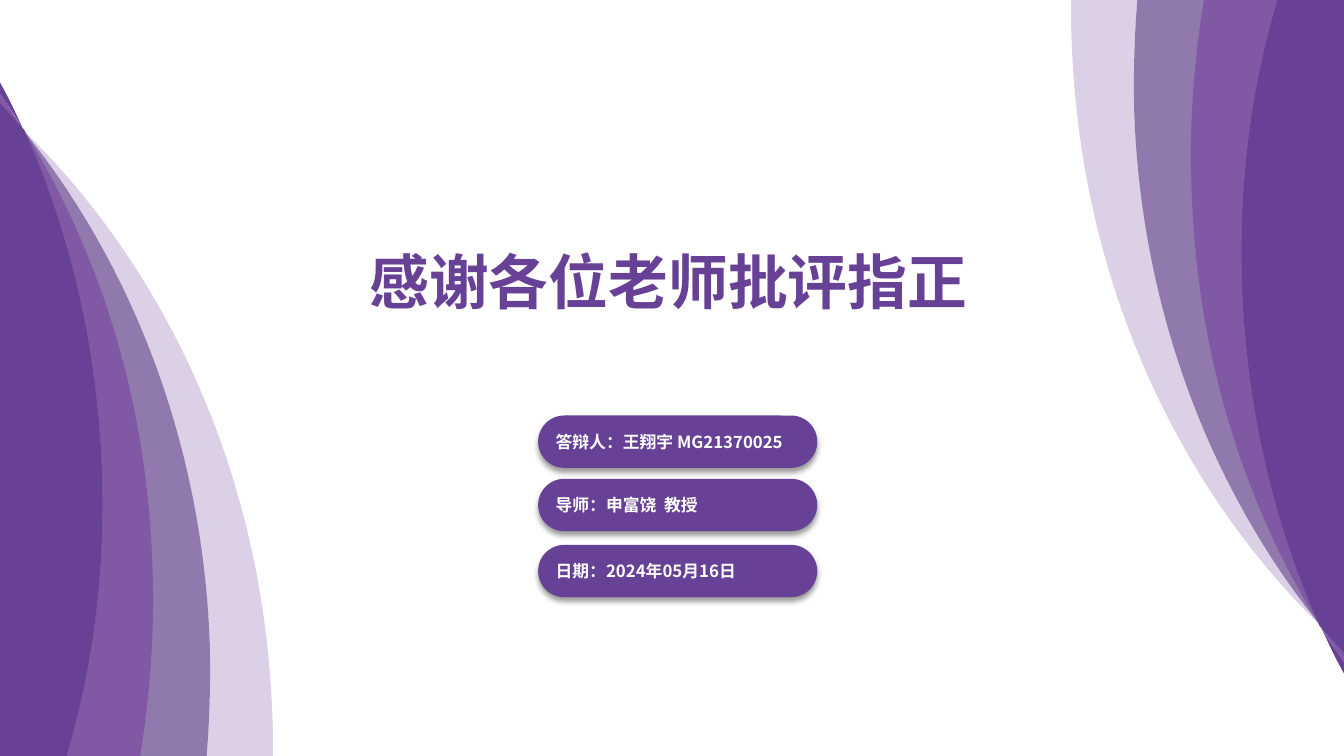
from lxml.etree import SubElement
from pptx import Presentation
from pptx.dml.color import RGBColor
from pptx.enum.shapes import MSO_SHAPE
from pptx.enum.text import MSO_ANCHOR, PP_ALIGN
from pptx.oxml.ns import qn
from pptx.util import Pt

WIDTH, HEIGHT = 960, 540
FONT = "Noto Sans CJK SC"
PURPLE, VIOLET, MAUVE, LILAC = "674196", "8058A3", "9079AD", "DBD0E6"

# Left bands, back to front: colour, then a start point followed by
# lines (x, y) and cubic curves (x1, y1, x2, y2, x, y), in points
BANDS = [
    (LILAC, [(0, 77.8), (0, 540), (195, 540),
             (195, 529.2, 195, 518.4, 194.4, 507.6),
             (187.9, 341.3, 120.2, 194.4, 18, 94.3), (18.7, 95.8),
             (95, 191.5, 144, 318.2, 149.8, 458.6),
             (150.5, 486, 149.8, 513.4, 147.6, 540), (0, 540)]),
    (MAUVE, [(147.6, 540), (149.8, 513.4, 150.5, 486, 149.8, 458.6),
             (144, 306.7, 87.1, 171.4, 0, 73.4), (0, 540)]),
    ("DDE3E5", [(15.8, 90.7), (16.6, 92.9), (17.3, 93.6), (18, 94.3)]),
    ("D0D6D8", [(17.3, 93.6), (18.7, 95.8), (18, 94.3)]),
    (VIOLET, [(0, 73.4), (0, 540), (100.1, 540),
              (107.3, 495.4, 110.9, 448.6, 108.7, 400.3),
              (104.4, 286.6, 72, 182.2, 18.7, 95.8),
              (17.3, 93.6), (17.3, 92.9),
              (49.7, 164.9, 69.1, 246.2, 72.7, 332.6),
              (75.6, 405.4, 67, 475.2, 47.5, 540), (0, 540)]),
    (PURPLE, [(0, 59), (0, 67), (5, 74.9, 10.8, 82.1, 15.8, 90.7),
              (10.8, 79.9, 5.8, 69.1, 0, 59)]),
    (VIOLET, [(0, 67), (0, 73.4), (5.8, 79.9, 11.5, 86.4, 17.3, 93.6),
              (15.8, 90.7), (10.8, 82.8, 5, 74.9, 0, 67)]),
    (PURPLE, [(0, 73.4), (0, 540), (47.5, 540),
              (67, 475.2, 75.6, 405.4, 72.7, 332.6),
              (69.1, 246.2, 49.7, 164.9, 17.3, 92.9),
              (11.5, 86.4, 5.8, 79.9, 0, 73.4)]),
]

# Top edge and wording of each capsule
CAPSULES = [
    (296.8, "答辩人：王翔宇 MG21370025"),
    (342, "导师：申富饶  教授"),
    (389.2, "日期：2024年05月16日"),
]


def colour(value):
    return RGBColor.from_string(value)


def paint(shape, fill):
    shape.shadow.inherit = False
    shape.fill.solid()
    shape.fill.fore_color.rgb = colour(fill)
    shape.line.fill.background()


def half_turn(segment):
    """Turn a segment by half a circle about the centre of the page."""
    return tuple((HEIGHT if i % 2 else WIDTH) - value
                 for i, value in enumerate(segment))


def add_band(page, fill, outline):
    segments = [[Pt(value) for value in segment] for segment in outline]
    builder = page.shapes.build_freeform(*segments[0], scale=1.0)
    builder.add_line_segments([segment[-2:] for segment in segments[1:]], close=True)
    band = builder.convert_to_shape()
    paint(band, fill)

    # Bend the lines that stand for curves
    lines = list(band._element.iter(qn("a:lnTo")))
    for line, segment in zip(lines, segments[1:]):
        if len(segment) == 6:
            line.tag = qn("a:cubicBezTo")
            line.clear()
            for x, y in zip(segment[::2], segment[1::2]):
                SubElement(line, qn("a:pt"), x=str(x - band.left), y=str(y - band.top))


def write(box, text, size, ink, align):
    frame = box.text_frame
    frame.vertical_anchor = MSO_ANCHOR.MIDDLE
    para = frame.paragraphs[0]
    para.text = text
    para.alignment = align
    para.font.size = Pt(size)
    para.font.bold = True
    para.font.color.rgb = colour(ink)
    para.font.name = FONT
    # Chinese characters take the East Asian typeface
    properties = para._p.get_or_add_pPr().find(qn("a:defRPr"))
    SubElement(properties, qn("a:ea"), typeface=FONT)


def add_title(page, text):
    title = page.shapes.title
    title.left, title.top, title.width, title.height = Pt(255), Pt(171), Pt(445), Pt(59)
    title.text_frame.word_wrap = False
    write(title, text, 42.7, PURPLE, PP_ALIGN.CENTER)


def add_capsule(page, top, text):
    capsule = page.shapes.add_shape(
        MSO_SHAPE.ROUNDED_RECTANGLE, Pt(384.4), Pt(top), Pt(199.4), Pt(37.4))
    capsule.adjustments[0] = 0.5
    paint(capsule, PURPLE)
    # Soft shadow straight below
    effects = capsule._element.spPr.find(qn("a:effectLst"))
    shadow = SubElement(effects, qn("a:outerShdw"), blurRad=str(Pt(4)),
                        dist=str(Pt(3)), dir="5400000", algn="t", rotWithShape="0")
    black = SubElement(shadow, qn("a:srgbClr"), val="000000")
    SubElement(black, qn("a:alpha"), val="40000")
    write(capsule, text, 12, "FFFFFF", PP_ALIGN.LEFT)


def main():
    deck = Presentation()
    deck.slide_width, deck.slide_height = Pt(WIDTH), Pt(HEIGHT)
    page = deck.slides.add_slide(deck.slide_layouts[5])

    # Bands on the left, then the same ones turned to the right
    for fill, outline in BANDS:
        add_band(page, fill, outline)
    for fill, outline in BANDS:
        add_band(page, fill, [half_turn(segment) for segment in outline])

    add_title(page, "感谢各位老师批评指正")
    for top, text in CAPSULES:
        add_capsule(page, top, text)

    deck.save("out.pptx")


if __name__ == "__main__":
    main()
